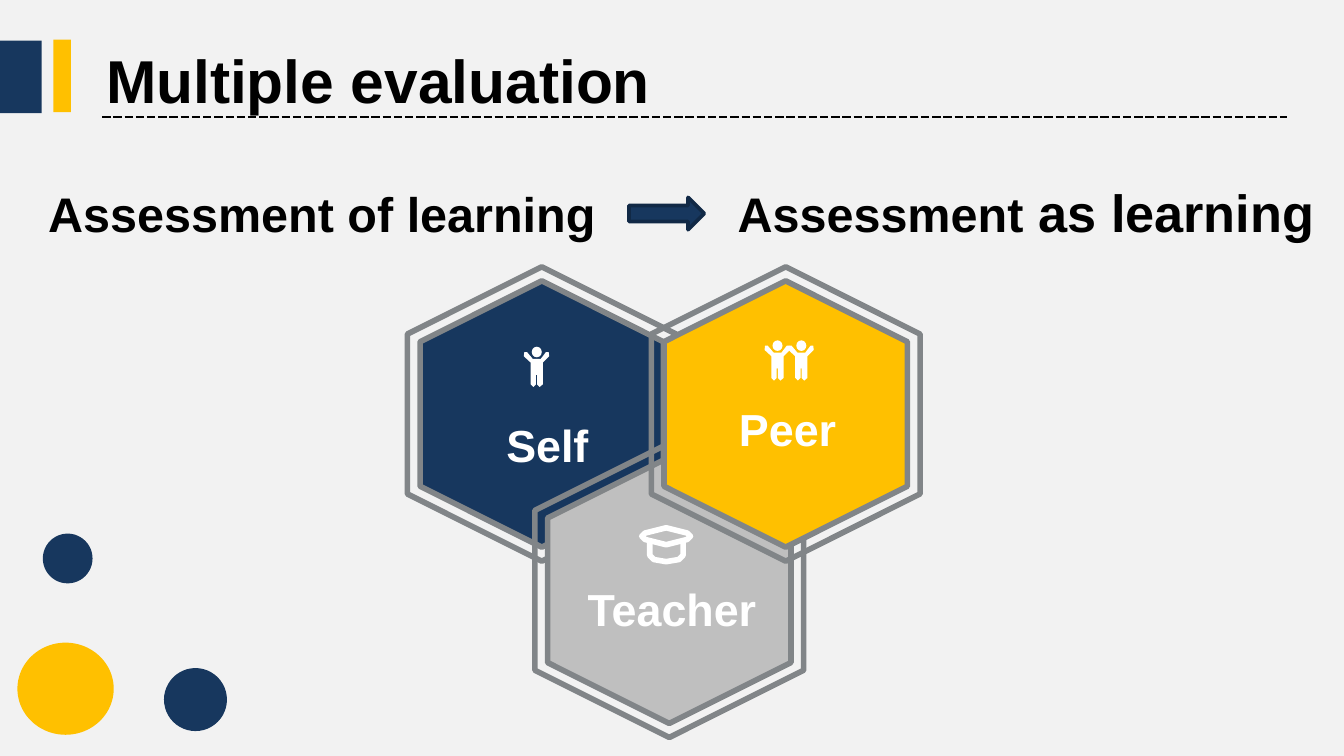
from lxml.etree import SubElement
from pptx import Presentation
from pptx.dml.color import RGBColor
from pptx.enum.dml import MSO_LINE
from pptx.enum.shapes import MSO_CONNECTOR, MSO_SHAPE as Preset
from pptx.enum.text import MSO_ANCHOR, MSO_AUTO_SIZE, PP_ALIGN
from pptx.oxml.ns import qn
from pptx.util import Cm, Pt

FONT = "Arial"
COLORS = {
    "background": "F2F2F2", "navy": "17375E", "navy_edge": "112946",
    "gold": "FFC000", "silver": "BFBFBF", "edge": "818588",
    "black": "000000", "white": "FFFFFF",
}

# Lengths are in centimetres; boxes are left, top, width, height.
TITLE = ("Multiple evaluation", (1.75, 0.91, 12.6, 2.72))
HEADINGS = [
    ([("Assessment of learning", 26)], (0.66, 3.35, 11.23, 1.37)),
    ([("Assessment", 26), (" as learning", 28)], (13.69, 3.28, 12.6, 1.45)),
]
DECORATIONS = [
    (Preset.OVAL, "navy", (3.1, 12.62, 1.19, 1.19)),
    (Preset.OVAL, "gold", (0.33, 12.14, 1.82, 1.74)),
    (Preset.OVAL, "navy", (0.81, 10.08, 0.94, 0.94)),
    (Preset.RECTANGLE, "navy", (-0.03, 0.77, 0.82, 1.37)),
    (Preset.RECTANGLE, "gold", (1.01, 0.75, 0.33, 1.37)),
]
HEXAGON_SIZES = [(5.56, 5.08), (5.03, 4.6)]  # outer ring, inner tile
EVALUATORS = [  # back to front
    {"label": "Self", "color": "navy", "center": (10.24, 7.82),
     "box": (9.19, 7.77, 2.31, 1.27), "people": [(9.9, 6.55)]},
    {"label": "Teacher", "color": "silver", "center": (12.65, 11.15),
     "box": (10.82, 10.87, 3.76, 1.27), "cap": (12.09, 9.93)},
    {"label": "Peer", "color": "gold", "center": (14.85, 7.82),
     "box": (13.69, 7.47, 2.39, 1.27), "people": [(14.45, 6.43), (14.9, 6.43)]},
]

HEAD = (0.15, 0, 0.19, 0.2)
BODY = [
    (0.36, 0.3), (0.36, 0.71), (0.3, 0.76), (0.25, 0.71), (0.25, 0.53),
    (0.23, 0.53), (0.23, 0.71), (0.18, 0.76), (0.13, 0.71), (0.13, 0.3),
    (0, 0.18), (0.01, 0.1), (0.06, 0.1), (0.17, 0.23), (0.32, 0.23),
    (0.42, 0.1), (0.47, 0.1), (0.48, 0.18),
]
CAP_BOARD = [
    (0.04, 0.2), (0.1, 0.14), (0.5, 0.04), (0.9, 0.14),
    (0.96, 0.2), (0.9, 0.26), (0.5, 0.36), (0.1, 0.26),
]
CAP_BASE = [
    (0.19, 0.3), (0.19, 0.56), (0.27, 0.64), (0.5, 0.68),
    (0.74, 0.64), (0.82, 0.56), (0.82, 0.3),
]


def rgb(name):
    return RGBColor.from_string(COLORS[name])


def paint(shape, fill=None, line=None, width=0):
    shape.shadow.inherit = False
    if fill:
        shape.fill.solid()
        shape.fill.fore_color.rgb = rgb(fill)
    else:
        shape.fill.background()
    if line:
        shape.line.color.rgb = rgb(line)
        shape.line.width = Pt(width)
        SubElement(shape.line._get_or_add_ln(), qn("a:round"))
    else:
        shape.line.fill.background()


def add_preset(slide, preset, box, **style):
    shape = slide.shapes.add_shape(preset, *map(Cm, box))
    paint(shape, **style)
    return shape


def add_outline(slide, origin, points, closed=True, **style):
    """Draw points given relative to origin."""
    left, top = origin
    placed = [(Cm(left + x), Cm(top + y)) for x, y in points]
    builder = slide.shapes.build_freeform(*placed[0])
    builder.add_line_segments(placed[1:], close=closed)
    paint(builder.convert_to_shape(), **style)


def format_run(run, size, color):
    run.font.name = FONT
    run.font.size = Pt(size)
    run.font.bold = True
    run.font.color.rgb = rgb(color)


def add_text(slide, runs, box, color, alignment=PP_ALIGN.LEFT):
    frame = slide.shapes.add_textbox(*map(Cm, box)).text_frame
    frame.word_wrap = True
    paragraph = frame.paragraphs[0]
    paragraph.alignment = alignment
    for text, size in runs:
        run = paragraph.add_run()
        run.text = text
        format_run(run, size, color)


def add_title(slide):
    text, box = TITLE
    title = slide.shapes.title
    title.left, title.top, title.width, title.height = map(Cm, box)
    frame = title.text_frame
    frame.text = text
    frame.auto_size = MSO_AUTO_SIZE.NONE
    frame.vertical_anchor = MSO_ANCHOR.TOP
    frame.margin_top = 0
    paragraph = frame.paragraphs[0]
    paragraph.alignment = PP_ALIGN.LEFT
    paragraph.line_spacing = 0.95
    format_run(paragraph.runs[0], 32.4, "black")


def add_title_rule(slide):
    rule = slide.shapes.add_connector(
        MSO_CONNECTOR.STRAIGHT, Cm(1.93), Cm(2.21), Cm(24.33), Cm(2.21))
    rule.line.color.rgb = rgb("black")
    rule.line.width = Pt(1.5)
    rule.line.dash_style = MSO_LINE.SQUARE_DOT
    SubElement(rule._element.spPr, qn("a:effectLst"))


def add_person(slide, origin):
    left, top = origin
    x, y, width, height = HEAD
    add_outline(slide, origin, BODY, fill="white")
    add_preset(slide, Preset.OVAL, (left + x, top + y, width, height), fill="white")


def add_cap(slide, origin):
    add_outline(slide, origin, CAP_BOARD, line="white", width=3)
    add_outline(slide, origin, CAP_BASE, closed=False, line="white", width=3)


def add_evaluator(slide, evaluator):
    x, y = evaluator["center"]
    for (width, height), fill in zip(HEXAGON_SIZES, (None, evaluator["color"])):
        box = (x - width / 2, y - height / 2, width, height)
        hexagon = add_preset(slide, Preset.HEXAGON, box, fill=fill, line="edge", width=3)
        hexagon.rotation = 270
    for origin in evaluator.get("people", []):
        add_person(slide, origin)
    if "cap" in evaluator:
        add_cap(slide, evaluator["cap"])
    add_text(slide, [(evaluator["label"], 24)], evaluator["box"], "white", PP_ALIGN.CENTER)


def main():
    presentation = Presentation()
    presentation.slide_width, presentation.slide_height = Cm(25.4), Cm(14.28)
    slide = presentation.slides.add_slide(presentation.slide_layouts[5])
    slide.background.fill.solid()
    slide.background.fill.fore_color.rgb = rgb("background")

    add_title(slide)
    for runs, box in HEADINGS:
        add_text(slide, runs, box, "black")
    add_preset(slide, Preset.RIGHT_ARROW, (11.89, 3.73, 1.42, 0.61),
               fill="navy", line="navy_edge", width=2)
    for preset, color, box in DECORATIONS:
        add_preset(slide, preset, box, fill=color)
    add_title_rule(slide)
    for evaluator in EVALUATORS:
        add_evaluator(slide, evaluator)
    presentation.save("out.pptx")


if __name__ == "__main__":
    main()
